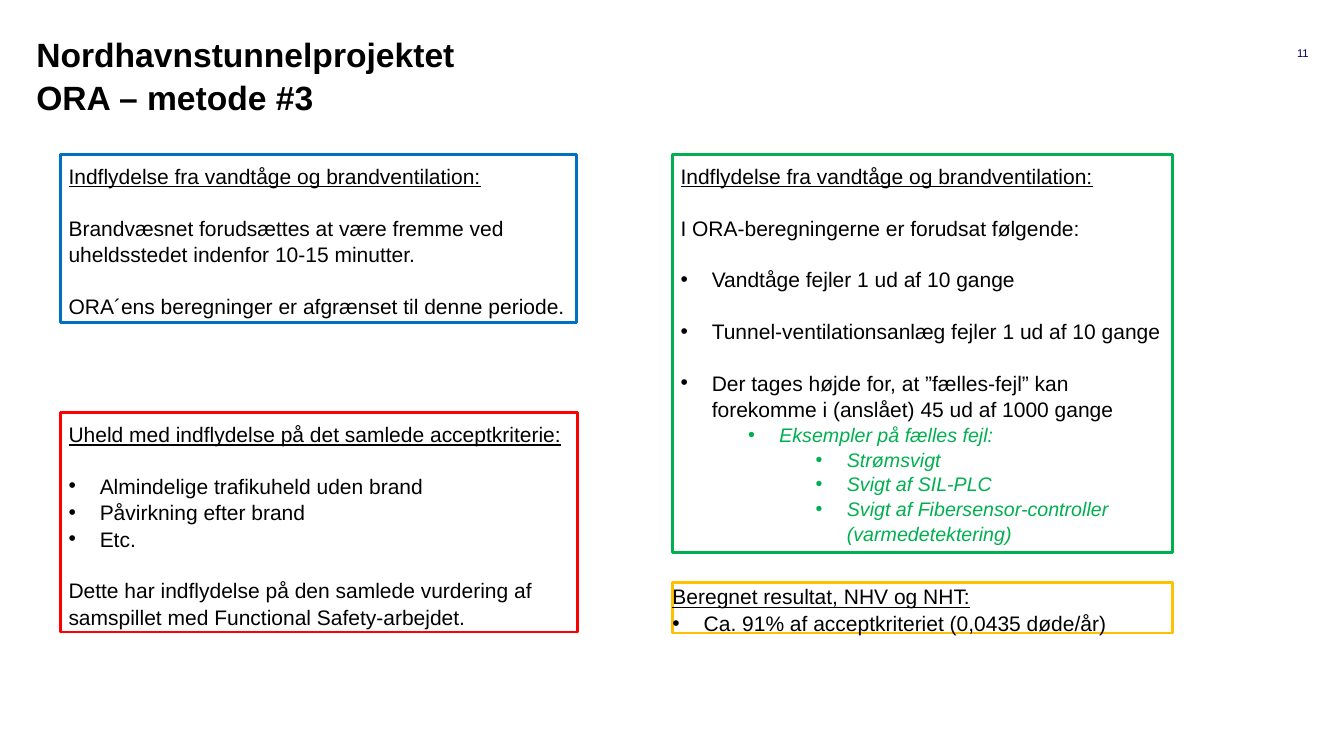
from lxml import etree
from pptx import Presentation
from pptx.dml.color import RGBColor
from pptx.enum import shapes, text
from pptx.oxml import ns
from pptx.util import Inches, Pt

BLACK = RGBColor(0, 0, 0)
NAVY = RGBColor(0, 0, 0x5E)
BLUE = RGBColor(0, 0x70, 0xC0)
RED = RGBColor(0xFF, 0, 0)
GREEN = RGBColor(0, 0xB0, 0x50)
AMBER = RGBColor(0xFF, 0xC0, 0)

HANG = 0.31
STEP = 0.67
GAP = 18
LEFT, RIGHT = 0.6, 6.67
TOP = 1.53

IMPACT = "Indflydelse fra vandtåge og brandventilation:"


def set_font(para, size, color, bold=None):
    font = para.font
    font.name = "Arial"
    font.size = Pt(size)
    font.color.rgb = color
    font.bold = bold
    para.line_spacing = 1.05


def add_bullet(para, level):
    para.level = level
    props = para._p.get_or_add_pPr()
    props.set("marL", str(Inches(HANG + STEP * level)))
    props.set("indent", str(-Inches(HANG)))
    face = etree.SubElement(props, ns.qn("a:buFont"))
    face.set("typeface", "Arial")
    mark = etree.SubElement(props, ns.qn("a:buChar"))
    mark.set("char", "•")


def set_frame(frame, inset, wrap, anchor=text.MSO_ANCHOR.TOP):
    frame.margin_left = frame.margin_right = Inches(inset)
    frame.margin_top = frame.margin_bottom = Inches(inset)
    frame.word_wrap = wrap
    frame.vertical_anchor = anchor


def add_lines(frame, lines):
    for num, line in enumerate(lines):
        para = frame.paragraphs[0] if num == 0 else frame.add_paragraph()
        para.text = line
        yield para


def add_label(slide, box, lines, size, color, bold, wrap, align, anchor):
    label = slide.shapes.add_textbox(*map(Inches, box))
    set_frame(label.text_frame, 0, wrap, anchor)
    for para in add_lines(label.text_frame, lines):
        para.alignment = align
        set_font(para, size, color, bold)


def add_panel(slide, box, color, head, items, inset=0.08):
    panel = slide.shapes.add_shape(shapes.MSO_SHAPE.RECTANGLE, *map(Inches, box))
    panel.shadow.inherit = False
    panel.fill.background()
    panel.line.color.rgb = color
    panel.line.width = Pt(2)
    frame = panel.text_frame
    set_frame(frame, inset, True)
    rows = [(head, None, 0)] + items
    paras = add_lines(frame, [row[0] for row in rows])
    for para, (_, level, gap) in zip(paras, rows):
        para.alignment = text.PP_ALIGN.LEFT
        if gap:
            para.space_before = Pt(gap)
        if level is not None:
            add_bullet(para, level)
        if level:
            set_font(para, 14, GREEN)
            para.font.italic = True
        else:
            set_font(para, 15, BLACK)
    frame.paragraphs[0].font.underline = True


def main():
    deck = Presentation()
    deck.slide_width, deck.slide_height = Inches(13.33), Inches(7.5)
    slide = deck.slides.add_slide(deck.slide_layouts[6])

    add_label(slide, (12.45, 0.32, 0.53, 0.4), ["11"], 8, NAVY, False, True,
              text.PP_ALIGN.RIGHT, text.MSO_ANCHOR.MIDDLE)
    add_label(slide, (0.36, 0.32, 4.19, 0.81),
              ["Nordhavnstunnelprojektet", "ORA – metode #3"], 24, BLACK, True,
              False, text.PP_ALIGN.LEFT, text.MSO_ANCHOR.TOP)

    add_panel(slide, (RIGHT, TOP, 4.96, 3.95), GREEN, IMPACT, [
        ("I ORA-beregningerne er forudsat følgende:", None, GAP),
        ("Vandtåge fejler 1 ud af 10 gange", 0, GAP),
        ("Tunnel-ventilationsanlæg fejler 1 ud af 10 gange", 0, GAP),
        ("Der tages højde for, at ”fælles-fejl” kan forekomme i (anslået) "
         "45 ud af 1000 gange", 0, GAP),
        ("Eksempler på fælles fejl:", 1, 0),
        ("Strømsvigt", 2, 0),
        ("Svigt af SIL-PLC", 2, 0),
        ("Svigt af Fibersensor-controller (varmedetektering)", 2, 0),
    ])
    add_panel(slide, (LEFT, TOP, 5.12, 1.67), BLUE, IMPACT, [
        ("Brandvæsnet forudsættes at være fremme ved uheldsstedet indenfor "
         "10-15 minutter.", None, GAP),
        ("ORA´ens beregninger er afgrænset til denne periode.", None, GAP),
    ])
    add_panel(slide, (LEFT, 4.09, 5.13, 2.18), RED,
              "Uheld med indflydelse på det samlede acceptkriterie:", [
        ("Almindelige trafikuheld uden brand", 0, GAP),
        ("Påvirkning efter brand", 0, 0),
        ("Etc.", 0, 0),
        ("Dette har indflydelse på den samlede vurdering af samspillet med "
         "Functional Safety-arbejdet.", None, GAP),
    ])
    add_panel(slide, (RIGHT, 5.78, 4.96, 0.5), AMBER,
              "Beregnet resultat, NHV og NHT:",
              [("Ca. 91% af acceptkriteriet (0,0435 døde/år)", 0, 0)], inset=0)

    deck.save("out.pptx")


if __name__ == "__main__":
    main()
